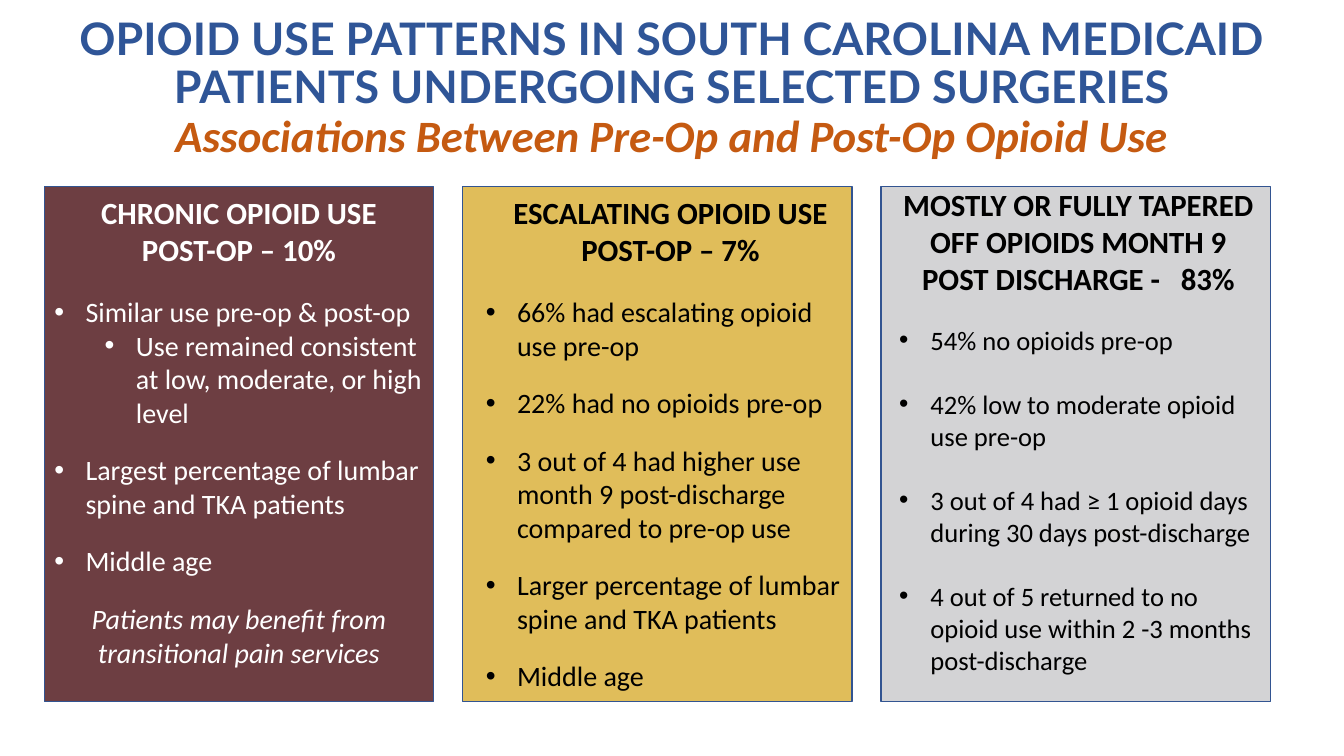
from dataclasses import dataclass

from lxml.etree import SubElement
from pptx import Presentation
from pptx.dml.color import RGBColor
from pptx.enum.shapes import MSO_SHAPE
from pptx.enum.text import MSO_ANCHOR, MSO_AUTO_SIZE, PP_ALIGN
from pptx.oxml.ns import qn
from pptx.util import Inches, Pt


@dataclass(frozen=True)
class Theme:
    title_font: str = "Lato"
    body_font: str = "Calibri"
    title: RGBColor = RGBColor(0x2F, 0x55, 0x97)
    subtitle: RGBColor = RGBColor(0xC5, 0x5A, 0x11)
    border: RGBColor = RGBColor(0x32, 0x54, 0x91)
    maroon: RGBColor = RGBColor(0x6D, 0x3E, 0x42)
    gold: RGBColor = RGBColor(0xE0, 0xBD, 0x5A)
    grey: RGBColor = RGBColor(0xD3, 0xD3, 0xD5)
    white: RGBColor = RGBColor(0xFF, 0xFF, 0xFF)
    black: RGBColor = RGBColor(0, 0, 0)
    title_size: Pt = Pt(32)
    heading_size: Pt = Pt(22)
    bullet_size: Pt = Pt(20)
    small_bullet_size: Pt = Pt(19)


THEME = Theme()
CARD_LEFT, CARD_TOP, CARD_PITCH = 0.44, 1.85, 4.15
CARD_WIDTH, CARD_HEIGHT = 3.86, 5.11
HEADING_GAP = Pt(19.5)
HANGING_INDENT = 0.31


@dataclass(frozen=True)
class Column:
    fill: RGBColor
    text_color: RGBColor
    text_box: tuple  # left, top, width, height in inches
    heading: str
    bullets: list  # (level, text)
    bullet_size: Pt = THEME.bullet_size
    bullet_gap: Pt = Pt(17)
    closing: str = ""


COLUMNS = [
    Column(
        THEME.maroon, THEME.white, (0.44, 1.87, 3.86, 4.88),
        "CHRONIC OPIOID USE\vPOST-OP – 10%",
        [
            (0, "Similar use pre-op & post-op"),
            (1, "Use remained consistent at low, moderate, or high level"),
            (0, "Largest percentage of lumbar spine and TKA patients"),
            (0, "Middle age"),
        ],
        closing="Patients may benefit from transitional pain services",
    ),
    Column(
        THEME.gold, THEME.black, (4.72, 1.87, 3.86, 5.39),
        "ESCALATING OPIOID USE POST-OP – 7%",
        [
            (0, "66% had escalating opioid use pre-op"),
            (0, "22% had no opioids pre-op"),
            (0, "3 out of 4 had higher use month 9 post-discharge compared to pre-op use"),
            (0, "Larger percentage of lumbar spine and TKA patients"),
            (0, "Middle age"),
        ],
    ),
    Column(
        THEME.grey, THEME.black, (8.82, 1.79, 3.75, 5.5),
        "MOSTLY OR FULLY TAPERED OFF OPIOIDS MONTH 9 POST DISCHARGE -   83%",
        [
            (0, "54% no opioids pre-op"),
            (0, "42% low to moderate opioid use pre-op"),
            (0, "3 out of 4 had ≥ 1 opioid days during 30 days post-discharge"),
            (0, "4 out of 5 returned to no opioid use within 2 -3 months post-discharge"),
        ],
        bullet_size=THEME.small_bullet_size,
        bullet_gap=Pt(23),
    ),
]


def style_font(font, name, size, color, bold=False, italic=False):
    font.name, font.size, font.bold, font.italic = name, size, bold, italic
    font.color.rgb = color


def add_title(slide):
    title = slide.shapes.title
    title.left, title.top = Inches(0.24), Inches(0)
    title.width, title.height = Inches(12.85), Inches(1.77)
    frame = title.text_frame
    frame.word_wrap = True
    frame.auto_size = MSO_AUTO_SIZE.NONE
    frame.vertical_anchor = MSO_ANCHOR.MIDDLE
    paragraph = frame.paragraphs[0]
    paragraph.alignment = PP_ALIGN.CENTER
    paragraph.line_spacing = 0.9
    main_line = paragraph.add_run()
    main_line.text = ("OPIOID USE PATTERNS IN SOUTH CAROLINA MEDICAID "
                      "PATIENTS UNDERGOING SELECTED SURGERIES")
    style_font(main_line.font, THEME.title_font, THEME.title_size, THEME.title, bold=True)
    paragraph.add_line_break()
    subtitle = paragraph.add_run()
    subtitle.text = "Associations Between Pre-Op and Post-Op Opioid Use"
    style_font(subtitle.font, THEME.body_font, THEME.title_size, THEME.subtitle,
               bold=True, italic=True)


def add_card(slide, left, fill):
    card = slide.shapes.add_shape(
        MSO_SHAPE.RECTANGLE, Inches(left), Inches(CARD_TOP),
        Inches(CARD_WIDTH), Inches(CARD_HEIGHT))
    card.shadow.inherit = False
    card.fill.solid()
    card.fill.fore_color.rgb = fill
    card.line.color.rgb = THEME.border
    card.line.width = Pt(1)


def set_bullet(paragraph, level):
    """Give the paragraph a round bullet and a hanging indent for its level."""
    paragraph.level = level
    properties = paragraph._p.get_or_add_pPr()
    properties.set("marL", str(Inches(HANGING_INDENT + 0.5 * level)))
    properties.set("indent", str(-Inches(HANGING_INDENT)))
    SubElement(properties, qn("a:buFont"), typeface="Arial")
    SubElement(properties, qn("a:buChar"), char="•")


def add_column_text(slide, column):
    box = slide.shapes.add_textbox(*(Inches(value) for value in column.text_box))
    frame = box.text_frame
    frame.word_wrap = True
    heading = frame.paragraphs[0]
    heading.text = column.heading
    heading.alignment = PP_ALIGN.CENTER
    style_font(heading.font, THEME.body_font, THEME.heading_size,
               column.text_color, bold=True)

    for index, (level, text) in enumerate(column.bullets):
        paragraph = frame.add_paragraph()
        paragraph.text = text
        if level == 0:
            paragraph.space_before = column.bullet_gap if index else HEADING_GAP
        set_bullet(paragraph, level)
        style_font(paragraph.font, THEME.body_font, column.bullet_size, column.text_color)

    if column.closing:
        closing = frame.add_paragraph()
        closing.text = column.closing
        closing.alignment = PP_ALIGN.CENTER
        closing.space_before = column.bullet_gap
        style_font(closing.font, THEME.body_font, column.bullet_size,
                   column.text_color, italic=True)


def main():
    presentation = Presentation()
    presentation.slide_width = Inches(13.33)
    presentation.slide_height = Inches(7.5)
    slide = presentation.slides.add_slide(presentation.slide_layouts[5])
    add_title(slide)
    for index, column in enumerate(COLUMNS):
        add_card(slide, CARD_LEFT + CARD_PITCH * index, column.fill)
        add_column_text(slide, column)
    presentation.save("out.pptx")


if __name__ == "__main__":
    main()
